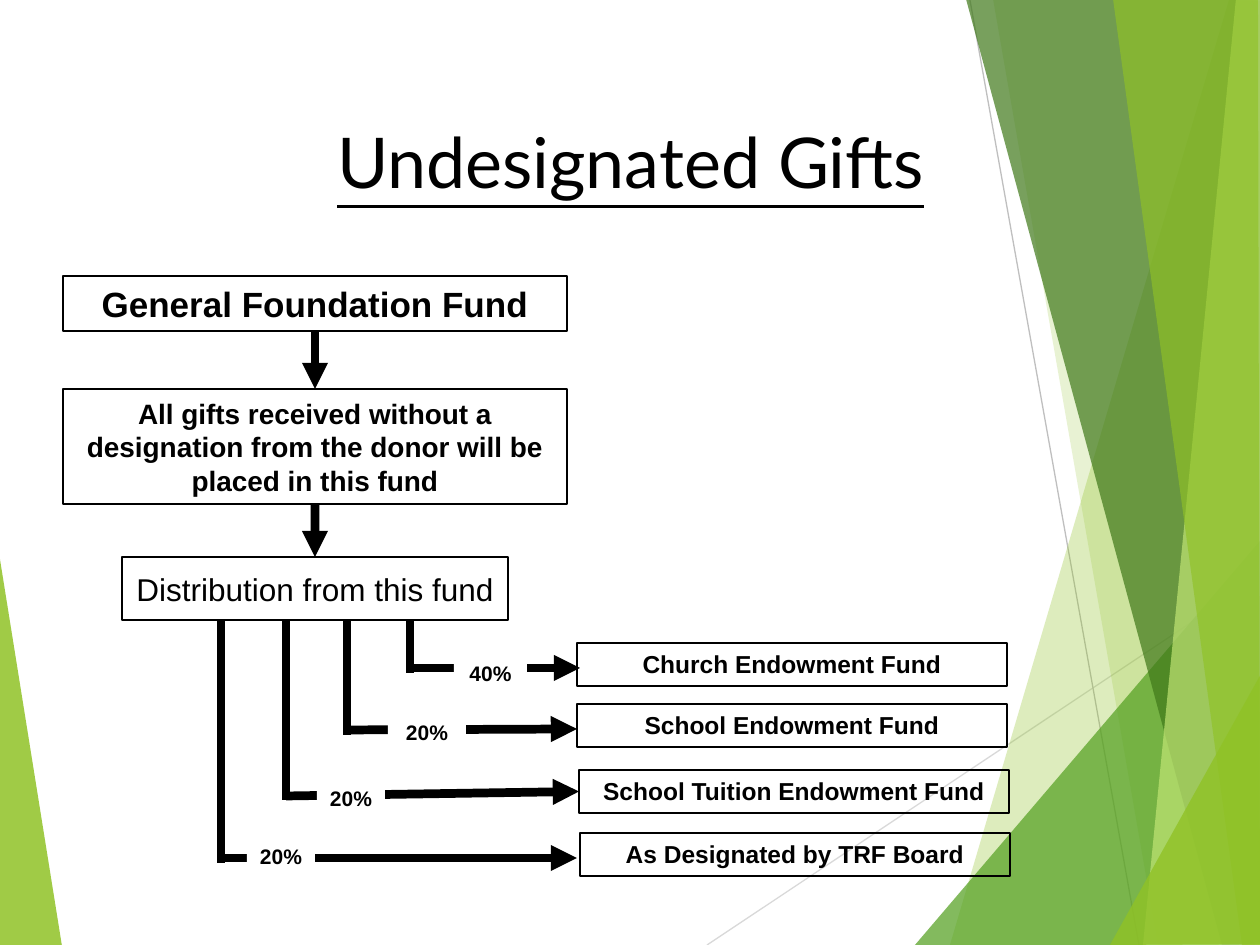
from dataclasses import dataclass

from lxml import etree
from pptx import Presentation
from pptx import util as u
from pptx.dml.color import RGBColor
from pptx.enum import shapes, text
from pptx.oxml import ns

PX = u.Inches(1) / 126

BLACK = RGBColor(0x00, 0x00, 0x00)
WHITE = RGBColor(0xFF, 0xFF, 0xFF)
LIME = RGBColor(0x90, 0xC2, 0x26)
GREEN = RGBColor(0x54, 0xA0, 0x21)
FOREST = RGBColor(0x3F, 0x78, 0x19)
PALE = RGBColor(0xC0, 0xE4, 0x74)
SILVER = RGBColor(0xD9, 0xD9, 0xD9)
GREY = RGBColor(0xBF, 0xBF, 0xBF)


@dataclass
class Leaf:
    color: RGBColor
    alpha: int  # percent
    points: list


@dataclass
class Box:
    words: str
    left: int
    top: int
    width: int
    height: int
    size: int
    bold: bool = True
    line: float = 0.75
    fill: RGBColor | None = None
    middle: bool = False
    wrap: bool = True


@dataclass
class Branch:
    stem: tuple  # x, top, bottom
    start: int  # y where the arrow leaves the stem
    end: tuple
    label: Box
    fund: Box
    joined: bool = False


def emu(px: float) -> u.Emu:
    return u.Emu(round(px * PX))


def draw_leaf(page, leaf: Leaf) -> None:
    pen = page.shapes.build_freeform(*leaf.points[0], scale=PX)
    pen.add_line_segments(leaf.points[1:], close=True)
    shape = pen.convert_to_shape()
    shape.shadow.inherit = False
    shape.line.fill.background()
    shape.fill.solid()
    shape.fill.fore_color.rgb = leaf.color
    tint = shape.fill._xPr.find(".//" + ns.qn("a:srgbClr"))
    etree.SubElement(tint, ns.qn("a:alpha"), val=str(leaf.alpha * 1000))


def draw_line(page, start: tuple, end: tuple, color: RGBColor = BLACK,
              width: float = 5, arrow: bool = False):
    line = page.shapes.add_connector(
        shapes.MSO_CONNECTOR.STRAIGHT, *map(emu, start + end))
    line.line.color.rgb = color
    line.line.width = u.Pt(width)
    if arrow:
        etree.SubElement(line.line._get_or_add_ln(), ns.qn("a:tailEnd"),
                         type="triangle")
    etree.SubElement(line._element.spPr, ns.qn("a:effectLst"))
    return line


def write(shape, words: str, wrap: bool, anchor, style: dict) -> None:
    frame = shape.text_frame
    frame.word_wrap = wrap
    frame.auto_size = text.MSO_AUTO_SIZE.SHAPE_TO_FIT_TEXT
    frame.vertical_anchor = anchor
    para = frame.paragraphs[0]
    para.alignment = text.PP_ALIGN.CENTER
    run = para.add_run()
    run.text = words
    run.font.color.rgb = BLACK
    for key, value in style.items():
        setattr(run.font, key, value)


def draw_box(page, box: Box):
    shape = page.shapes.add_shape(
        shapes.MSO_SHAPE.RECTANGLE,
        *map(emu, (box.left, box.top, box.width, box.height)))
    shape.shadow.inherit = False
    if box.fill is None:
        shape.fill.background()
    else:
        shape.fill.solid()
        shape.fill.fore_color.rgb = box.fill
    if box.line:
        shape.line.color.rgb = BLACK
        shape.line.width = u.Pt(box.line)
    else:
        shape.line.fill.background()
    anchor = text.MSO_ANCHOR.MIDDLE if box.middle else text.MSO_ANCHOR.TOP
    write(shape, box.words, box.wrap, anchor,
          {"name": "Arial", "size": u.Pt(box.size), "bold": box.bold})
    return shape


def share(words: str, left: int, top: int, width: int,
          wrap: bool = True) -> Box:
    return Box(words, left, top, width, 38, 12, line=0, fill=WHITE, wrap=wrap)


def fund(words: str, left: int, top: int) -> Box:
    return Box(words, left, top, 430, 43, 14)


def draw_branch(page, item: Branch) -> None:
    goal = draw_box(page, item.fund)
    x, top, bottom = item.stem
    draw_line(page, (x, top), (x, bottom))
    arrow = draw_line(page, (x, item.start), item.end, arrow=True)
    if item.joined:
        arrow.end_connect(goal, 1)
    draw_box(page, item.label)


LEFT = Leaf(LIME, 85, [(-1, 553), (62, 946), (-1, 945)])
LEAVES = [
    Leaf(LIME, 30, [(1229, 0), (950, 945), (1262, 946), (1261, 1)]),
    Leaf(LIME, 20, [(993, -1), (1158, 945), (1261, 945), (1261, -1)]),
    Leaf(GREEN, 72, [(915, 945), (1260, 541), (1261, 945)]),
    Leaf(FOREST, 70, [(966, -1), (1222, 945), (1261, 944), (1261, -1)]),
    Leaf(PALE, 70, [(1236, -1), (1143, 945), (1261, 945), (1260, -1)]),
    Leaf(LIME, 65, [(1113, -1), (1242, 945), (1260, 945), (1258, -1)]),
    Leaf(LIME, 80, [(1110, 945), (1261, 674), (1261, 944)]),
]

STEPS = [
    Box("General Foundation Fund", 63, 276, 504, 55, 20, middle=True),
    Box("All gifts received without a designation from the donor will be "
        "placed in this fund", 63, 389, 504, 115, 16, middle=True),
    Box("Distribution from this fund", 122, 557, 386, 63, 18, bold=False,
        line=1.5, fill=WHITE, middle=True, wrap=False),
]

BRANCHES = [
    Branch((410, 610, 673), 668, (580, 668), share("40%", 454, 654, 73),
           fund("Church Endowment Fund", 577, 643)),
    Branch((347, 609, 735), 730, (577, 729), share("20%", 388, 713, 78),
           fund("School Endowment Fund", 577, 704)),
    Branch((286, 611, 800), 796, (579, 791),
           share("20%", 317, 779, 68, wrap=False),
           fund("School Tuition Endowment Fund", 579, 770), joined=True),
    Branch((221, 611, 863), 858, (577, 858),
           share("20%", 247, 837, 68, wrap=False),
           fund("As Designated by TRF Board", 580, 833)),
]


def main() -> None:
    deck = Presentation()
    deck.slide_width, deck.slide_height = emu(1260), emu(945)
    page = deck.slides.add_slide(deck.slide_layouts[6])

    # Backdrop
    draw_leaf(page, LEFT)
    draw_line(page, (707, 945), (1261, 576), SILVER, 0.75)
    draw_line(page, (970, 0), (1139, 945), GREY, 0.75)
    for leaf in LEAVES:
        draw_leaf(page, leaf)

    # Title
    title = page.shapes.add_textbox(*map(emu, (305, 112, 651, 97)))
    write(title, "Undesignated Gifts", True, text.MSO_ANCHOR.TOP,
          {"name": "Lato", "size": u.Pt(40), "underline": True})

    # Shares paid to each fund
    for item in BRANCHES:
        draw_branch(page, item)

    # Steps from gift to distribution
    steps = [draw_box(page, box) for box in STEPS]
    for upper, lower in zip(steps, steps[1:]):
        arrow = draw_line(page, (315, 331), (315, 389), arrow=True)
        arrow.begin_connect(upper, 2)
        arrow.end_connect(lower, 0)

    deck.save("out.pptx")


if __name__ == "__main__":
    main()
